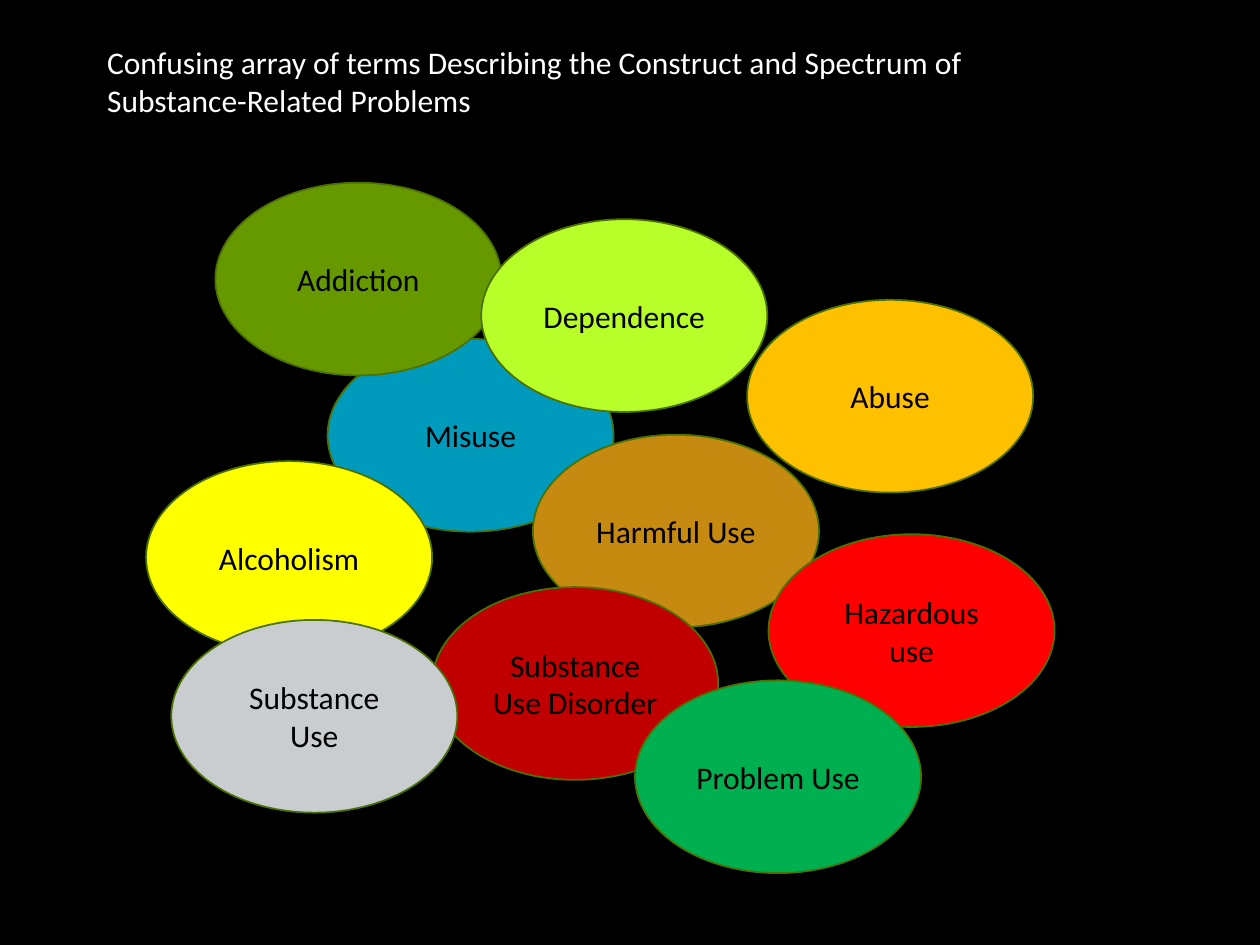
import pptx
import pptx.util
import pptx.dml.color
import pptx.enum.shapes
import pptx.enum.text
from pptx.util import Inches

OVAL_WIDTH, OVAL_HEIGHT = 2.27, 1.53

# Term, left, top, fill; listed from back to front
TERMS = [
    ("Misuse", 2.6, 2.69, "009BBC"),
    ("Harmful Use", 4.23, 3.45, "C68A10"),
    ("Addiction", 1.71, 1.45, "669900"),
    ("Hazardous use", 6.1, 4.24, "FF0000"),
    ("Substance Use Disorder", 3.43, 4.66, "C00000"),
    ("Dependence", 3.82, 1.74, "B8FF29"),
    ("Alcoholism", 1.16, 3.66, "FFFF00"),
    ("Abuse", 5.93, 2.38, "FFC000"),
    ("Substance Use", 1.36, 4.92, "C9CDCF"),
    ("Problem Use", 5.04, 5.4, "00B050"),
]


def rgb(value):
    return pptx.dml.color.RGBColor.from_string(value)


def set_text(tf, text, color, align, anchor):
    tf.text = text
    tf.word_wrap = True
    tf.vertical_anchor = anchor
    for p in tf.paragraphs:
        p.alignment = align
        for r in p.runs:
            r.font.name = "Calibri"
            r.font.size = pptx.util.Pt(18)
            r.font.color.rgb = rgb(color)


def add_title(s, text):
    sp = s.shapes.title
    sp.left, sp.top = Inches(0.75), Inches(0.29)
    sp.width, sp.height = Inches(7.13), Inches(0.71)
    set_text(sp.text_frame, text, "FFFFFF",
             pptx.enum.text.PP_ALIGN.LEFT, pptx.enum.text.MSO_ANCHOR.TOP)
    sp.text_frame.auto_size = pptx.enum.text.MSO_AUTO_SIZE.NONE


def add_term(s, term, left, top, fill):
    sp = s.shapes.add_shape(
        pptx.enum.shapes.MSO_SHAPE.OVAL, Inches(left), Inches(top),
        Inches(OVAL_WIDTH), Inches(OVAL_HEIGHT))
    sp.shadow.inherit = False
    sp.fill.solid()
    sp.fill.fore_color.rgb = rgb(fill)
    sp.line.color.rgb = rgb("4B7100")
    sp.line.width = pptx.util.Pt(1)
    set_text(sp.text_frame, term, "000000",
             pptx.enum.text.PP_ALIGN.CENTER, pptx.enum.text.MSO_ANCHOR.MIDDLE)


def main():
    prs = pptx.Presentation()
    prs.slide_width, prs.slide_height = Inches(10), Inches(7.5)
    s = prs.slides.add_slide(prs.slide_layouts.get_by_name("Title Only"))

    # Black background
    s.background.fill.solid()
    s.background.fill.fore_color.rgb = rgb("000000")

    # Title
    add_title(s, "Confusing array of terms Describing the Construct and Spectrum of\n"
                 "Substance-Related Problems")

    # Overlapping terms
    for term in TERMS:
        add_term(s, *term)

    prs.save("out.pptx")


if __name__ == "__main__":
    main()
